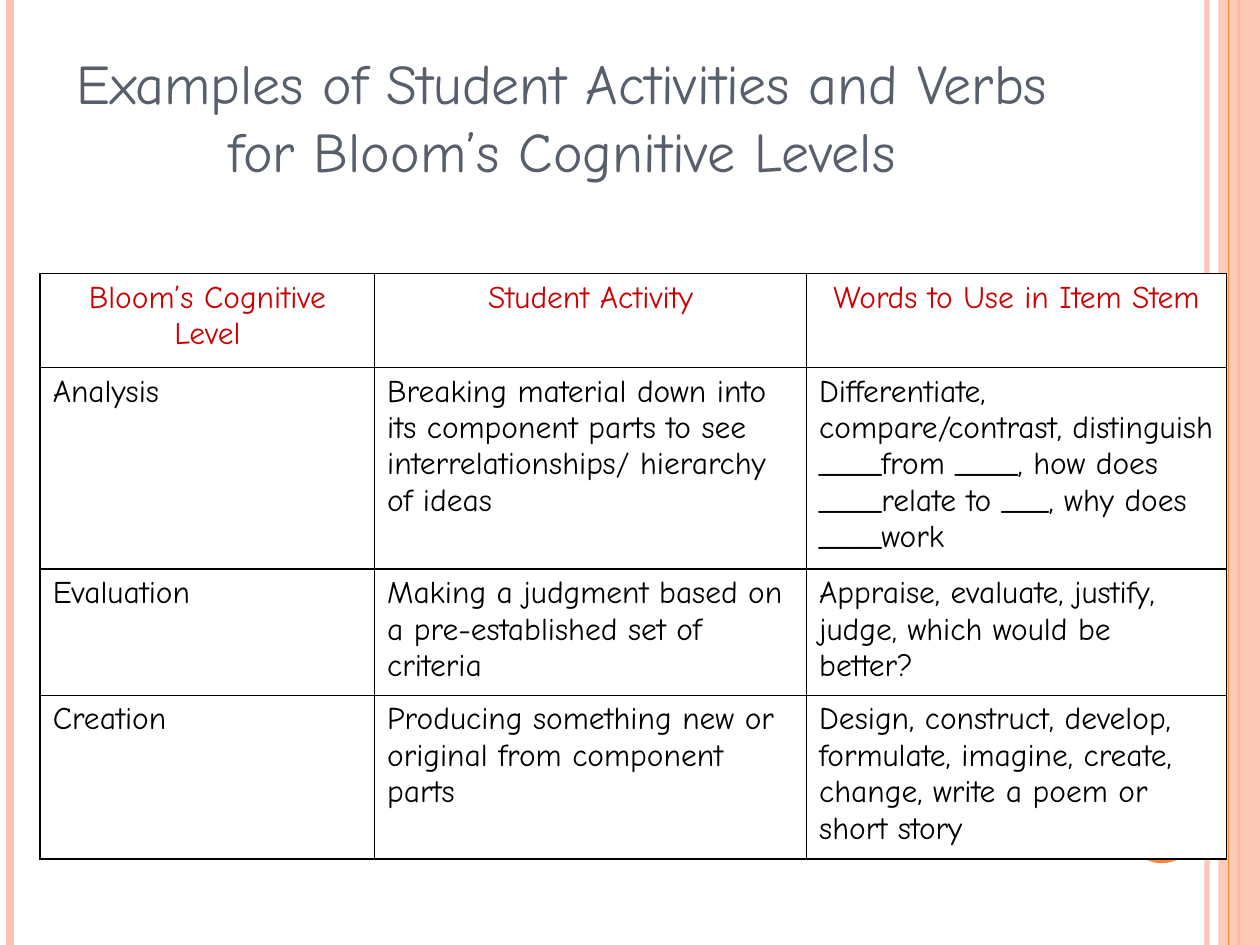
from dataclasses import dataclass
from typing import Optional

from lxml.etree import SubElement
from pptx import Presentation
from pptx.dml.color import RGBColor
from pptx.enum.shapes import MSO_CONNECTOR, MSO_SHAPE
from pptx.enum.text import MSO_ANCHOR, PP_ALIGN
from pptx.oxml.ns import qn
from pptx.util import Cm, Pt


@dataclass(frozen=True)
class Theme:
    font: str = "Comic Neue"
    title_size: int = 32
    table_size: int = 18
    border_width: float = 1
    title: str = "575F6D"
    header: str = "CC0000"
    body: str = "000000"
    border: str = "000000"
    paper: str = "FFFFFF"
    peach: str = "FEC3AE"
    orange: str = "FE8637"


@dataclass(frozen=True)
class Stripe:
    x: float
    color: str
    width: float
    opacity: Optional[int] = None


@dataclass(frozen=True)
class Panel:
    preset: MSO_SHAPE
    left: float
    top: float
    width: float
    height: float
    color: str
    opacity: Optional[int] = None


THEME = Theme()
PAGE_WIDTH, PAGE_HEIGHT = 25.4, 19.05

# Decoration, from back to front
DECORATION = [
    Stripe(24.33, THEME.peach, 3, 93),
    Stripe(0.21, THEME.peach, 4.5),
    Stripe(24.97, THEME.orange, 1.5),
    Panel(MSO_SHAPE.RECTANGLE, 24.56, 0, 0.84, PAGE_HEIGHT, THEME.peach, 87),
    Stripe(24.77, THEME.orange, 0.75),
    Panel(MSO_SHAPE.OVAL, 22.66, 15.88, 1.52, 1.52, THEME.orange),
]

TITLE = "Examples of Student Activities and Verbs for Bloom’s Cognitive Levels"
COLUMN_WIDTHS = [6.74, 8.71, 8.46]
ROW_HEIGHTS = [1.9, 4.06, 2.54, 3.3]
ROWS = [
    ("Bloom’s Cognitive Level", "Student Activity", "Words to Use in Item Stem"),
    ("Analysis",
     "Breaking material down into its component parts to see "
     "interrelationships/ hierarchy of ideas",
     "Differentiate, compare/contrast, distinguish ____from ____, "
     "how does ____relate to ___, why does ____work"),
    ("Evaluation",
     "Making a judgment based on a pre-established set of criteria",
     "Appraise, evaluate, justify, judge, which would be better?"),
    ("Creation",
     "Producing something new or original from component parts",
     "Design, construct, develop, formulate, imagine, create, change, "
     "write a poem or short story"),
]


def set_opacity(element, percent: Optional[int]) -> None:
    if percent is not None:
        color = next(element.iter(qn("a:srgbClr")))
        SubElement(color, qn("a:alpha"), val=str(percent * 1000))


def draw_stripe(page, stripe: Stripe) -> None:
    line = page.shapes.add_connector(
        MSO_CONNECTOR.STRAIGHT, Cm(stripe.x), Cm(0), Cm(stripe.x), Cm(PAGE_HEIGHT))
    line.line.color.rgb = RGBColor.from_string(stripe.color)
    line.line.width = Pt(stripe.width)
    properties = line._element.spPr
    set_opacity(properties, stripe.opacity)
    SubElement(properties, qn("a:effectLst"))


def draw_panel(page, panel: Panel) -> None:
    shape = page.shapes.add_shape(
        panel.preset, Cm(panel.left), Cm(panel.top), Cm(panel.width), Cm(panel.height))
    shape.shadow.inherit = False
    shape.fill.solid()
    shape.fill.fore_color.rgb = RGBColor.from_string(panel.color)
    shape.line.fill.background()
    set_opacity(shape._element.spPr, panel.opacity)


def write_text(frame, text: str, size: int, color: str, align: PP_ALIGN) -> None:
    frame.text = text
    frame.word_wrap = True
    para = frame.paragraphs[0]
    para.alignment = align
    for span in para.runs:
        span.font.name = THEME.font
        span.font.size = Pt(size)
        span.font.color.rgb = RGBColor.from_string(color)


def draw_title(page) -> None:
    box = page.shapes.add_textbox(Cm(0.64), Cm(0.84), Cm(21.39), Cm(3))
    box.text_frame.vertical_anchor = MSO_ANCHOR.MIDDLE
    write_text(box.text_frame, TITLE, THEME.title_size, THEME.title, PP_ALIGN.CENTER)


def style_cell(cell) -> None:
    properties = cell._tc.get_or_add_tcPr()
    for side in ("lnL", "lnR", "lnT", "lnB"):
        line = SubElement(properties, qn(f"a:{side}"), w=str(Pt(THEME.border_width)))
        fill = SubElement(line, qn("a:solidFill"))
        SubElement(fill, qn("a:srgbClr"), val=THEME.border)
    cell.fill.solid()
    cell.fill.fore_color.rgb = RGBColor.from_string(THEME.paper)


def draw_table(page) -> None:
    table = page.shapes.add_table(
        len(ROWS), len(COLUMN_WIDTHS), Cm(0.81), Cm(5.51),
        Cm(sum(COLUMN_WIDTHS)), Cm(sum(ROW_HEIGHTS))).table
    for column, width in zip(table.columns, COLUMN_WIDTHS):
        column.width = Cm(width)
    for row, height, texts in zip(table.rows, ROW_HEIGHTS, ROWS):
        row.height = Cm(height)
        is_header = texts is ROWS[0]
        color = THEME.header if is_header else THEME.body
        align = PP_ALIGN.CENTER if is_header else PP_ALIGN.LEFT
        for cell, text in zip(row.cells, texts):
            style_cell(cell)
            write_text(cell.text_frame, text, THEME.table_size, color, align)


def main() -> None:
    deck = Presentation()
    deck.slide_width, deck.slide_height = Cm(PAGE_WIDTH), Cm(PAGE_HEIGHT)
    page = deck.slides.add_slide(deck.slide_layouts[6])
    page.background.fill.solid()
    page.background.fill.fore_color.rgb = RGBColor.from_string(THEME.paper)

    for part in DECORATION:
        if isinstance(part, Stripe):
            draw_stripe(page, part)
        else:
            draw_panel(page, part)
    draw_title(page)
    draw_table(page)
    deck.save("out.pptx")


if __name__ == "__main__":
    main()
